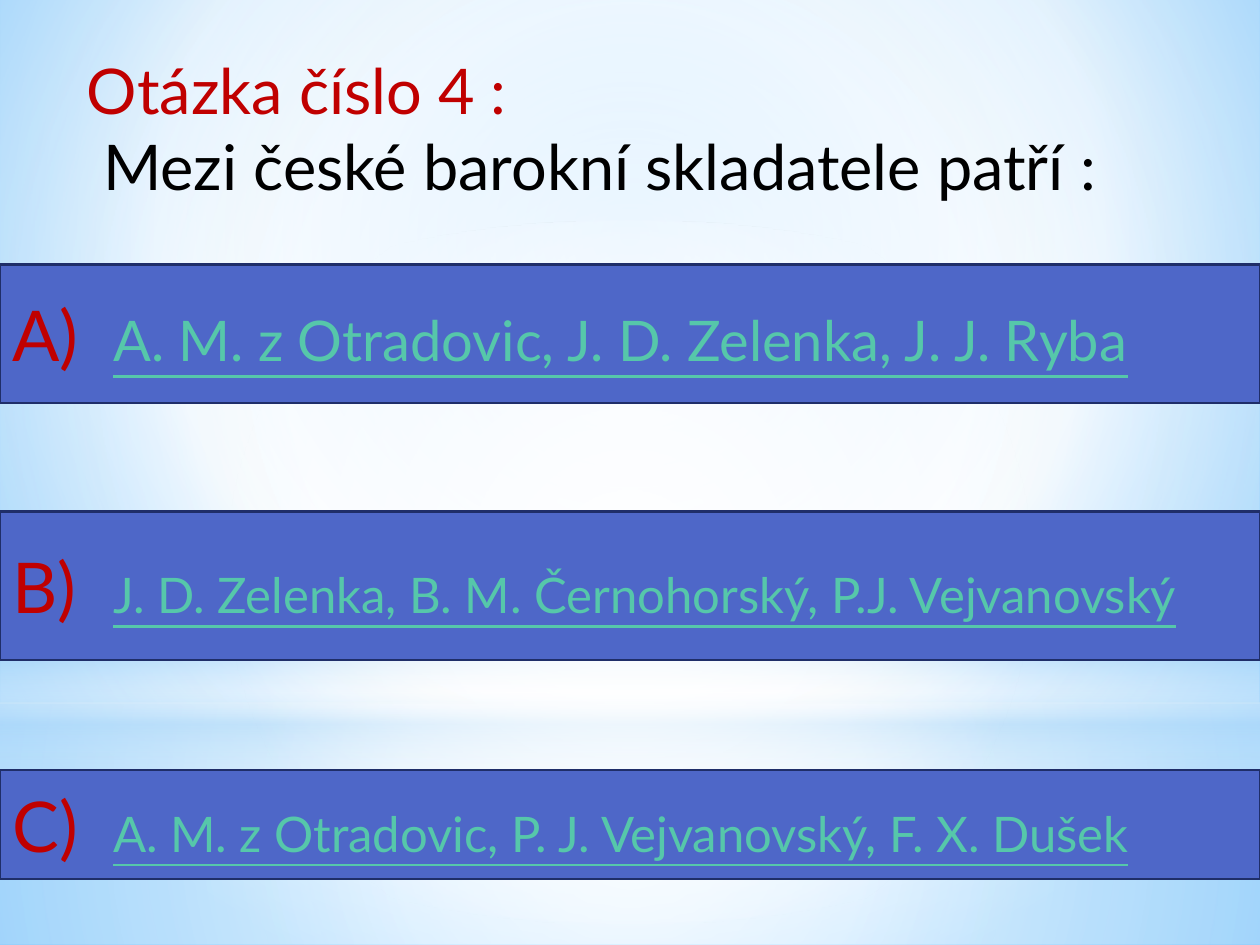
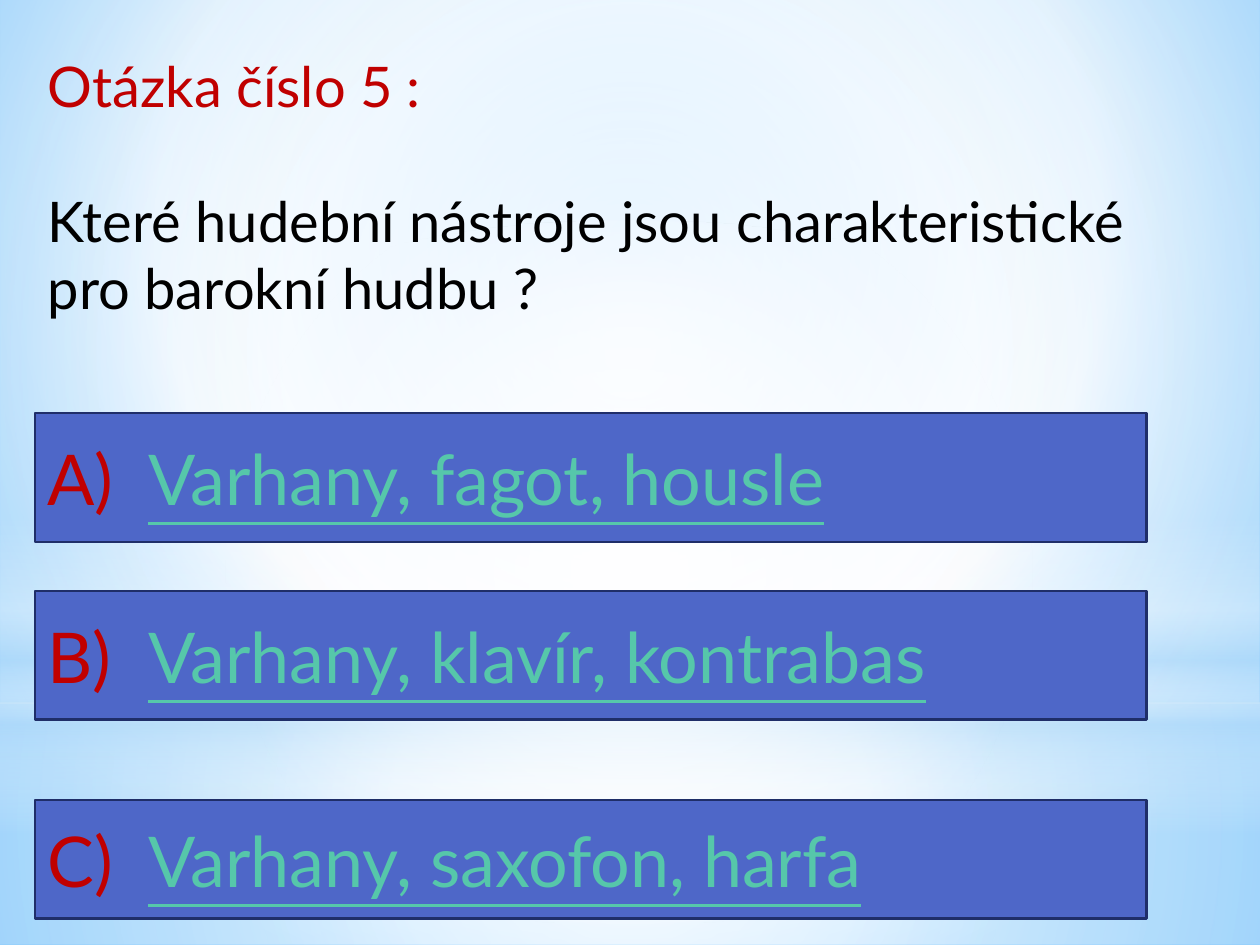
from lxml import etree
from pptx import Presentation
from pptx import util as u
from pptx.dml.color import RGBColor
from pptx.enum import shapes, text
from pptx.oxml import ns

WIDE, HIGH = 10, 7.5
FONT = "Lato"
RED, BLACK, BLUE, NAVY, MINT = "C00000", "000000", "4E67C8", "1F2E69", "56C7AA"
WHITE, SKY = "FFFFFF", "B4DCFA"
MARK, TAB = 40, 0.8
MID = (50, 50, 50, 50)
RECT, OVAL = shapes.MSO_SHAPE.RECTANGLE, shapes.MSO_SHAPE.OVAL

BACK = ([(0, "9ED5FF", 100), (60, WHITE, 100), (100, "5BB9FF", 100)], (20, 10, 20, 60))
GLOWS = [
    (RECT, 5.58, 1.92, [(0, WHITE, 91), (37, WHITE, 76), (100, SKY, 79)], MID),
    (RECT, 0, 5.58, [(0, WHITE, 89), (48, WHITE, 62), (100, SKY, 79)], MID),
    (RECT, 4.12, 2.5, [(0, WHITE, 0), (29, WHITE, 30), (45, SKY, 40),
                       (55, WHITE, 26), (65, SKY, 60), (100, WHITE, 0)], None),
    (OVAL, 1.75, 5.58, [(0, WHITE, 100), (56, WHITE, 0)], MID),
]

QUIZ = [
    {"head": "Otázka číslo 4 :", "ask": " Mezi české barokní skladatele patří :",
     "box": (0.59, 0.36, 8.98, 1.31), "size": 36, "gap": 0,
     "left": 0, "width": WIDE,
     "bars": [("A)", "A. M. z Otradovic, J. D. Zelenka, J. J. Ryba", 32, 2.1, 1.1),
              ("B)", "J. D. Zelenka, B. M. Černohorský, P.J. Vejvanovský", 28, 4.06, 1.18),
              ("C)", "A. M. z Otradovic, P. J. Vejvanovský, F. X. Dušek", 28, 6.11, 0.87)]},
    {"head": "Otázka číslo 5 :",
     "ask": "Které hudební nástroje jsou charakteristické\vpro barokní hudbu ?",
     "box": (0.28, 0.36, 9.37, 2.26), "size": 32, "gap": 38.5,
     "left": 0.28, "width": 8.82,
     "bars": [("A)", "Varhany, fagot, housle", 40, 3.28, 1.02),
              ("B)", "Varhany, klavír, kontrabas", 40, 4.69, 1.02),
              ("C)", "Varhany, saxofon, harfa", 40, 6.35, 0.94)]},
]


def color(code):
    return RGBColor.from_string(code)


def style(run, size, code, line=False):
    font = run.font
    font.name, font.size, font.underline = FONT, u.Pt(size), line
    font.color.rgb = color(code)


def node(top, tag, **attrs):
    return etree.SubElement(top, ns.qn(tag), {k: str(v) for k, v in attrs.items()})


def blend(host, fill, stops, focus):
    fill.solid()
    flat = host.find(".//" + ns.qn("a:solidFill"))
    grad = etree.Element(ns.qn("a:gradFill"), rotWithShape="1")
    steps = node(grad, "a:gsLst")
    for pos, code, alpha in stops:
        tint = node(node(steps, "a:gs", pos=pos * 1000), "a:srgbClr", val=code)
        if alpha < 100:
            node(tint, "a:alpha", val=alpha * 1000)
    if focus:
        sides = {k: v * 1000 for k, v in zip("ltrb", focus)}
        node(node(grad, "a:path", path="circle"), "a:fillToRect", **sides)
    else:
        node(grad, "a:lin", ang=90 * 60000, scaled=0)
    flat.getparent().replace(flat, grad)


def block(slide, kind, *place):
    shape = slide.shapes.add_shape(kind, *map(u.Inches, place))
    shape.shadow.inherit = False
    return shape


def scene(master, slide):
    blend(master.element, master.background.fill, *BACK)
    for spot, (kind, top, high, stops, focus) in enumerate(GLOWS):
        glow = block(slide, kind, 0, top, WIDE, high)
        glow.line.fill.background()
        blend(glow.element, glow.fill, stops, focus)
        master.shapes.element.insert(2 + spot, glow.element)


def title(slide, item):
    shape = slide.shapes.title
    shape.left, shape.top, shape.width, shape.height = map(u.Inches, item["box"])
    frame = shape.text_frame
    frame.text = item["head"] + "\n" + item["ask"]
    frame.word_wrap = True
    frame.auto_size = text.MSO_AUTO_SIZE.NONE
    frame.vertical_anchor = text.MSO_ANCHOR.TOP
    for part, code in zip(frame.paragraphs, (RED, BLACK)):
        part.alignment = text.PP_ALIGN.LEFT
        for run in part.runs:
            style(run, item["size"], code)
    frame.paragraphs[1].space_before = u.Pt(item["gap"])


def bar(slide, left, width, mark, words, size, top, high):
    shape = block(slide, RECT, left, top, width, high)
    shape.fill.solid()
    shape.fill.fore_color.rgb = color(BLUE)
    shape.line.color.rgb = color(NAVY)
    shape.line.width = u.Pt(1.25)
    frame = shape.text_frame
    frame.word_wrap = True
    frame.vertical_anchor = text.MSO_ANCHOR.MIDDLE
    part = frame.paragraphs[0]
    part.alignment = text.PP_ALIGN.LEFT
    tabs = node(part._p.get_or_add_pPr(), "a:tabLst")
    node(tabs, "a:tab", pos=u.Inches(TAB), algn="l")
    for words, points, code, line in ((mark + "\t", MARK, RED, False),
                                      (words, size, MINT, True)):
        run = part.add_run()
        run.text = words
        style(run, points, code, line)


def main():
    deck = Presentation()
    deck.slide_width, deck.slide_height = u.Inches(WIDE), u.Inches(HIGH)
    plain = deck.slide_layouts[5]
    for index, item in enumerate(QUIZ):
        slide = deck.slides.add_slide(plain)
        if index == 0:
            scene(deck.slide_master, slide)
        title(slide, item)
        for row in item["bars"]:
            bar(slide, item["left"], item["width"], *row)
    deck.save("out.pptx")


if __name__ == "__main__":
    main()
